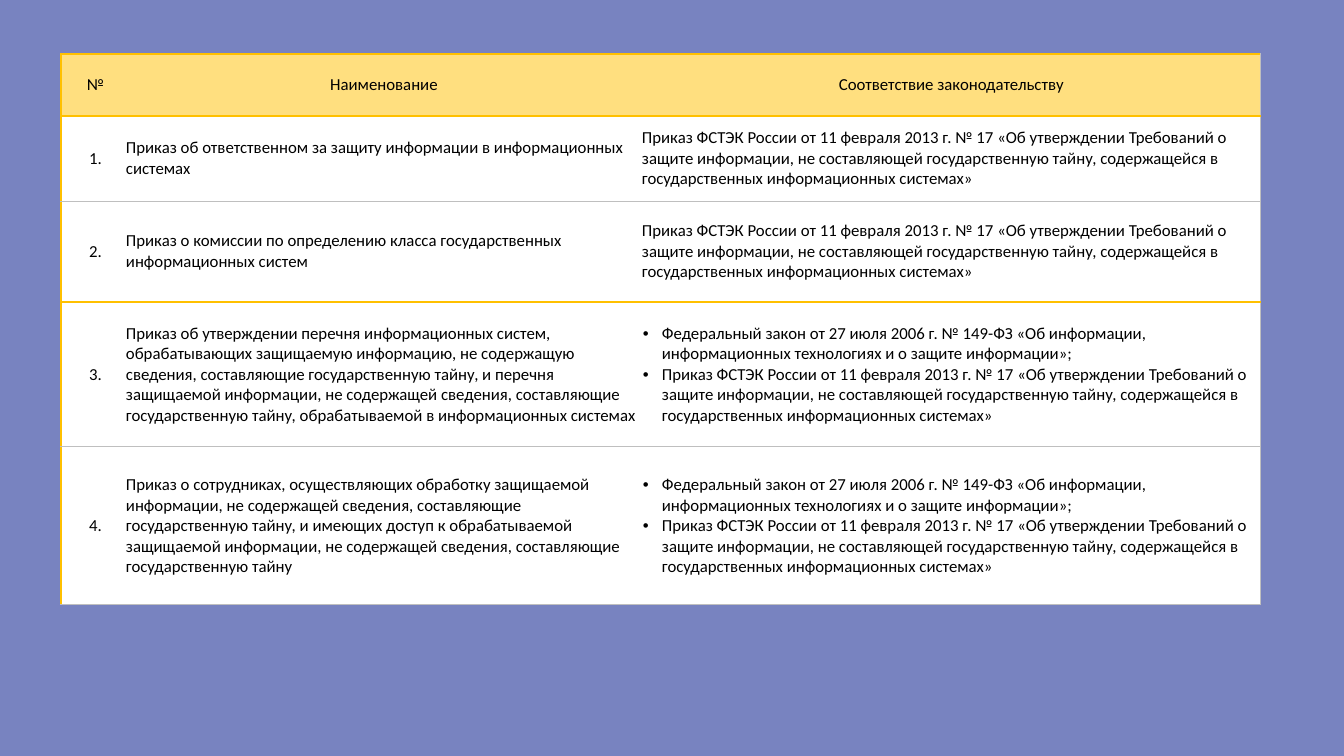
from lxml.etree import SubElement
from pptx import Presentation
from pptx.dml.color import RGBColor
from pptx.enum.text import MSO_ANCHOR as Anchor, PP_ALIGN as Align
from pptx.oxml.ns import qn
from pptx.util import Pt

PX = 914400 / 100.8
GOLD, GREY = ("FFC000", 1.5), ("BFBFBF", 0.75)
COLUMNS = [65, 516, 619]
ROWS = [62, 85, 101, 145, 158]
RULES = [GOLD, GOLD, GREY, GOLD, GREY, GREY]

LAW = ("Федеральный закон от 27 июля 2006 г. № 149-ФЗ «Об информации, "
       "информационных технологиях и о защите информации»;")
ORDER = ("Приказ ФСТЭК России от 11 февраля 2013 г. № 17 «Об утверждении Требований о "
         "защите информации, не составляющей государственную тайну, содержащейся в "
         "государственных информационных системах»")
HEADINGS = ["№", "Наименование", "Соответствие законодательству"]
DOCUMENTS = [
    ("Приказ об ответственном за защиту информации в информационных системах", [ORDER]),
    ("Приказ о комиссии по определению класса государственных информационных систем",
     [ORDER]),
    ("Приказ об утверждении перечня информационных систем, обрабатывающих защищаемую "
     "информацию, не содержащую сведения, составляющие государственную тайну, и перечня "
     "защищаемой информации, не содержащей сведения, составляющие государственную тайну, "
     "обрабатываемой в информационных системах", [LAW, ORDER]),
    ("Приказ о сотрудниках, осуществляющих обработку защищаемой информации, не содержащей "
     "сведения, составляющие государственную тайну, и имеющих доступ к обрабатываемой "
     "защищаемой информации, не содержащей сведения, составляющие государственную тайну",
     [LAW, ORDER]),
]


def px(length):
    """Turn whole pixels into EMU."""
    return round(length * PX)


def paint(fill, color):
    """Give a fill one solid colour."""
    fill.solid()
    fill.fore_color.rgb = RGBColor.from_string(color)


def draw_borders(cell, borders):
    """Draw the sides of a cell; a side without a rule is left clear."""
    properties = cell._tc.get_or_add_tcPr()
    for side, rule in borders.items():
        edge = SubElement(properties, qn(f"a:ln{side}"))
        if rule is None:
            SubElement(edge, qn("a:noFill"))
            continue
        color, width = rule
        edge.set("w", str(Pt(width)))
        solid = SubElement(edge, qn("a:solidFill"))
        SubElement(solid, qn("a:srgbClr"), val=color)


def add_bullet(paragraph):
    """Turn a paragraph into a bulleted item with a hanging indent."""
    properties = paragraph._p.get_or_add_pPr()
    properties.set("marL", str(px(20)))
    properties.set("indent", str(-px(19)))
    SubElement(properties, qn("a:buFont"), typeface="Arial")
    SubElement(properties, qn("a:buChar"), char="•")


def write_cell(cell, lines, align, inset):
    """Write the lines of a cell, with bullets when there are several."""
    layout = {"margin_left": px(inset), "margin_right": 0, "margin_top": 0,
              "margin_bottom": 0, "vertical_anchor": Anchor.MIDDLE}
    for name, value in layout.items():
        setattr(cell, name, value)
    cell.text_frame.text = "\n".join(lines)
    for paragraph in cell.text_frame.paragraphs:
        paragraph.alignment = align
        if len(lines) > 1:
            add_bullet(paragraph)
        font = paragraph.runs[0].font
        for name, value in {"name": "Calibri", "size": Pt(12), "bold": False}.items():
            setattr(font, name, value)
        paint(font.fill, "000000")


def add_orders_table(slide, left, top):
    """Place the table of orders and the laws they follow."""
    orders = slide.shapes.add_table(len(ROWS), len(COLUMNS), px(left), px(top),
                                    px(sum(COLUMNS)), px(sum(ROWS))).table
    orders.first_row = orders.horz_banding = False
    for column, width in zip(orders.columns, COLUMNS):
        column.width = px(width)
    for row, height in zip(orders.rows, ROWS):
        row.height = px(height)

    contents = [[[heading] for heading in HEADINGS]]
    contents += [[[f"{number}."], [title], laws]
                 for number, (title, laws) in enumerate(DOCUMENTS, 1)]
    last = len(COLUMNS) - 1
    for r, row in enumerate(contents):
        for c, lines in enumerate(row):
            cell = orders.cell(r, c)
            draw_borders(cell, {"L": GOLD if c == 0 else None,
                                "R": GREY if c == last else None,
                                "T": RULES[r], "B": RULES[r + 1]})
            paint(cell.fill, "FFDF7F" if r == 0 else "FFFFFF")
            centred = r == 0 or c == 0
            write_cell(cell, lines, Align.CENTER if centred else Align.LEFT,
                       4 if c == 0 else 0)


def main():
    """Build and save the slide."""
    deck = Presentation()
    deck.slide_width, deck.slide_height = px(1344), px(756)
    slide = deck.slides.add_slide(deck.slide_layouts[6])
    paint(slide.background.fill, "7883C0")
    add_orders_table(slide, 61, 54)
    deck.save("out.pptx")


if __name__ == "__main__":
    main()
